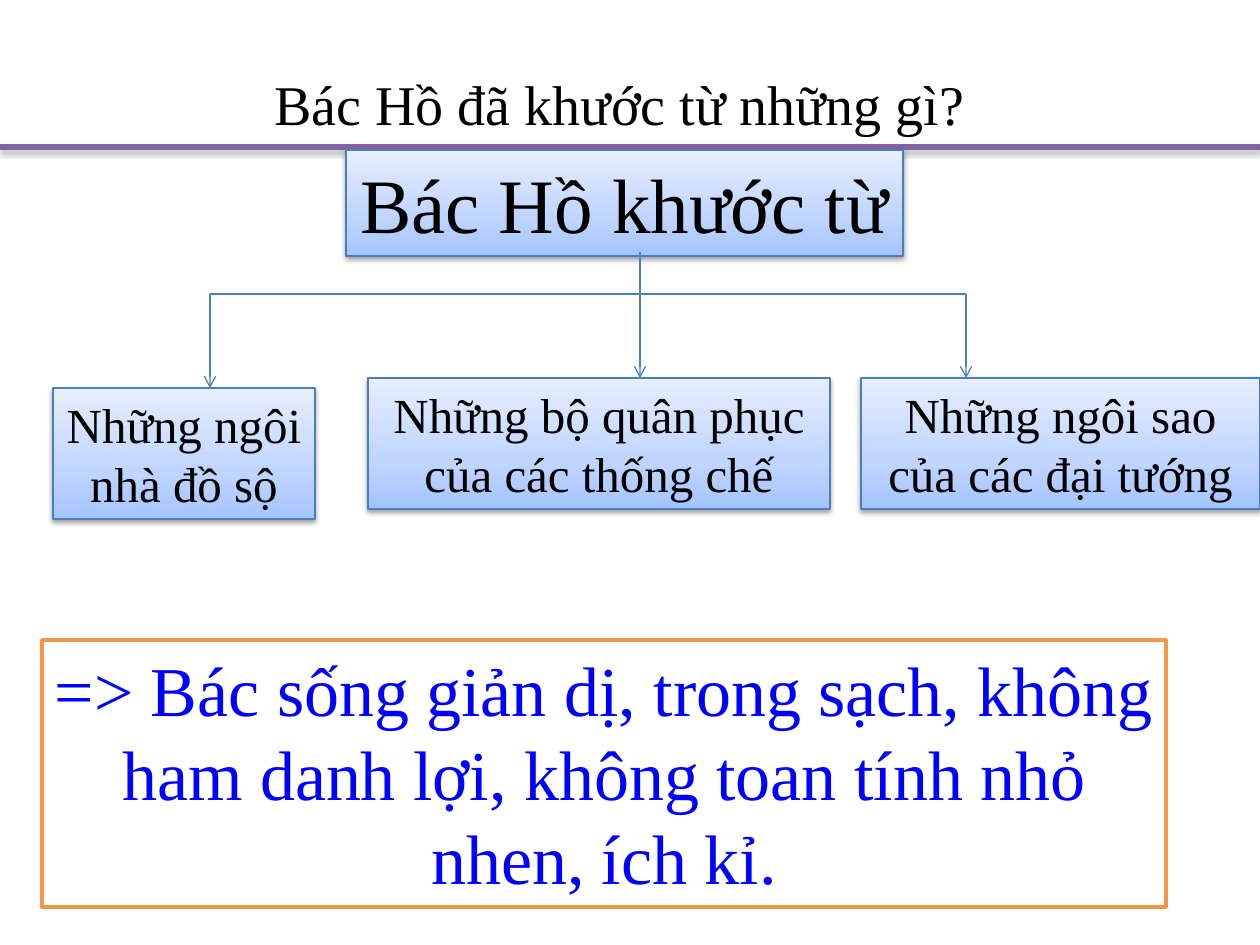
"""Build the slide about what Bác Hồ declined, as a tree with a conclusion."""
from dataclasses import dataclass
from typing import Optional

from lxml import etree
from pptx import Presentation
from pptx import util as u
from pptx.dml import color
from pptx.enum import shapes, text
from pptx.oxml import ns

PX = 914400 / 126
FONT = "Times New Roman"
COLORS = {
    "black": "000000",
    "white": "FFFFFF",
    "blue": "0000FF",
    "edge": "4B7EBC",
    "orange": "F79646",
    "purple": "8064A2",
}
GRADIENT = ((0, "A4C4FF"), (35, "BFD4FF"), (100, "E6EEFF"))


@dataclass(frozen=True)
class Shadow:
    alpha: int
    distance: float
    blur: float = 3.1


@dataclass(frozen=True)
class Box:
    wording: str
    left: int
    top: int
    width: int
    height: int
    size: int = 28
    ink: str = "black"
    edge: str = "edge"
    weight: float = 0.75
    shaded: bool = True


@dataclass(frozen=True)
class Line:
    start: tuple[int, int]
    end: tuple[int, int]
    arrow: bool = True
    ink: str = "edge"
    weight: float = 0.75
    shadow: Optional[Shadow] = None


BRANCH_Y, LEFT_X, MIDDLE_X, RIGHT_X = 294, 210, 640, 966
CHILD_TOP, LEFT_TOP, CHILD_HEIGHT = 378, 388, 131

RULE = Line((0, 147), (1260, 147), False, "purple", 3, Shadow(35, 1.8))
BOXES = (
    Box("Bác Hồ khước từ", 346, 150, 557, 106, 44),
    Box("Những ngôi nhà đồ sộ", 53, LEFT_TOP, 262, CHILD_HEIGHT),
    Box("Những bộ quân phục của các thống chế", 368, CHILD_TOP, 462, CHILD_HEIGHT),
    Box("Những ngôi sao của các đại tướng", 861, CHILD_TOP, 399, CHILD_HEIGHT),
    Box("=> Bác sống giản dị, trong sạch, không ham danh lợi, không toan tính nhỏ nhen, ích kỉ.",
        42, 640, 1124, 267, 40, "blue", "orange", 2, False),
)
BRANCHES = (
    Line((LEFT_X, BRANCH_Y), (RIGHT_X, BRANCH_Y), False),
    Line((RIGHT_X, BRANCH_Y), (RIGHT_X, CHILD_TOP)),
    Line((MIDDLE_X, 252), (MIDDLE_X, CHILD_TOP)),
    Line((LEFT_X, BRANCH_Y), (LEFT_X, LEFT_TOP)),
)


def px(*lengths: int) -> list[u.Emu]:
    """Turn pixel lengths into EMU."""
    return [u.Emu(round(length * PX)) for length in lengths]


def rgb(name: str) -> color.RGBColor:
    """Look up a named colour."""
    return color.RGBColor.from_string(COLORS[name])


def add_element(parent, tag: str, **attributes):
    """Append a DrawingML element."""
    values = {key: str(value) for key, value in attributes.items()}
    return etree.SubElement(parent, ns.qn(tag), values)


def add_shadow(effects, shadow: Shadow) -> None:
    """Put a downward outer shadow in an effect list."""
    outer = add_element(effects, "a:outerShdw", blurRad=u.Pt(shadow.blur),
                        dist=u.Pt(shadow.distance), dir=5400000, rotWithShape=0)
    tint = add_element(outer, "a:srgbClr", val=COLORS["black"])
    add_element(tint, "a:alpha", val=shadow.alpha * 1000)


def shade(shape) -> None:
    """Give a box its three-stop gradient and shadow."""
    shape.fill.gradient()
    shape.fill.gradient_angle = 90
    properties = shape.element.spPr
    stops = properties.find(".//" + ns.qn("a:gsLst"))
    for stop in list(stops):
        stops.remove(stop)
    for position, value in GRADIENT:
        stop = add_element(stops, "a:gs", pos=position * 1000)
        add_element(stop, "a:srgbClr", val=value)
    add_shadow(properties.find(ns.qn("a:effectLst")), Shadow(38, 1.6))


def write(shape, wording: str, size: int, ink: str, alignment) -> None:
    """Write one run of text into a shape."""
    frame = shape.text_frame
    frame.word_wrap = True
    frame.auto_size = text.MSO_AUTO_SIZE.SHAPE_TO_FIT_TEXT
    frame.vertical_anchor = text.MSO_ANCHOR.TOP
    paragraph = frame.paragraphs[0]
    paragraph.alignment = alignment
    run = paragraph.add_run()
    run.text = wording
    run.font.name = FONT
    run.font.size = u.Pt(size)
    run.font.color.rgb = rgb(ink)


def draw_box(slide, box: Box) -> None:
    """Draw a bordered box with centred text."""
    shape = slide.shapes.add_shape(
        shapes.MSO_SHAPE.RECTANGLE, *px(box.left, box.top, box.width, box.height))
    shape.shadow.inherit = False
    shape.line.color.rgb = rgb(box.edge)
    shape.line.width = u.Pt(box.weight)
    if box.shaded:
        shade(shape)
    else:
        shape.fill.solid()
        shape.fill.fore_color.rgb = rgb("white")
    write(shape, box.wording, box.size, box.ink, text.PP_ALIGN.CENTER)


def draw_line(slide, line: Line) -> None:
    """Draw a straight line, with an arrowhead or shadow if asked."""
    connector = slide.shapes.add_connector(
        shapes.MSO_CONNECTOR.STRAIGHT, *px(*line.start, *line.end))
    connector.line.color.rgb = rgb(line.ink)
    connector.line.width = u.Pt(line.weight)
    properties = connector.element.spPr
    if line.arrow:
        add_element(properties.find(ns.qn("a:ln")), "a:tailEnd", type="arrow")
    effects = add_element(properties, "a:effectLst")
    if line.shadow:
        add_shadow(effects, line.shadow)


def main() -> None:
    """Build and save the presentation."""
    presentation = Presentation()
    presentation.slide_width, presentation.slide_height = px(1260, 945)
    slide = presentation.slides.add_slide(presentation.slide_layouts[6])
    draw_line(slide, RULE)
    for box in BOXES:
        draw_box(slide, box)
    for branch in BRANCHES:
        draw_line(slide, branch)
    question = slide.shapes.add_textbox(*px(262, 63, 725, 81))
    write(question, "Bác Hồ đã khước từ những gì?", 32, "black", text.PP_ALIGN.LEFT)
    presentation.save("out.pptx")


if __name__ == "__main__":
    main()
